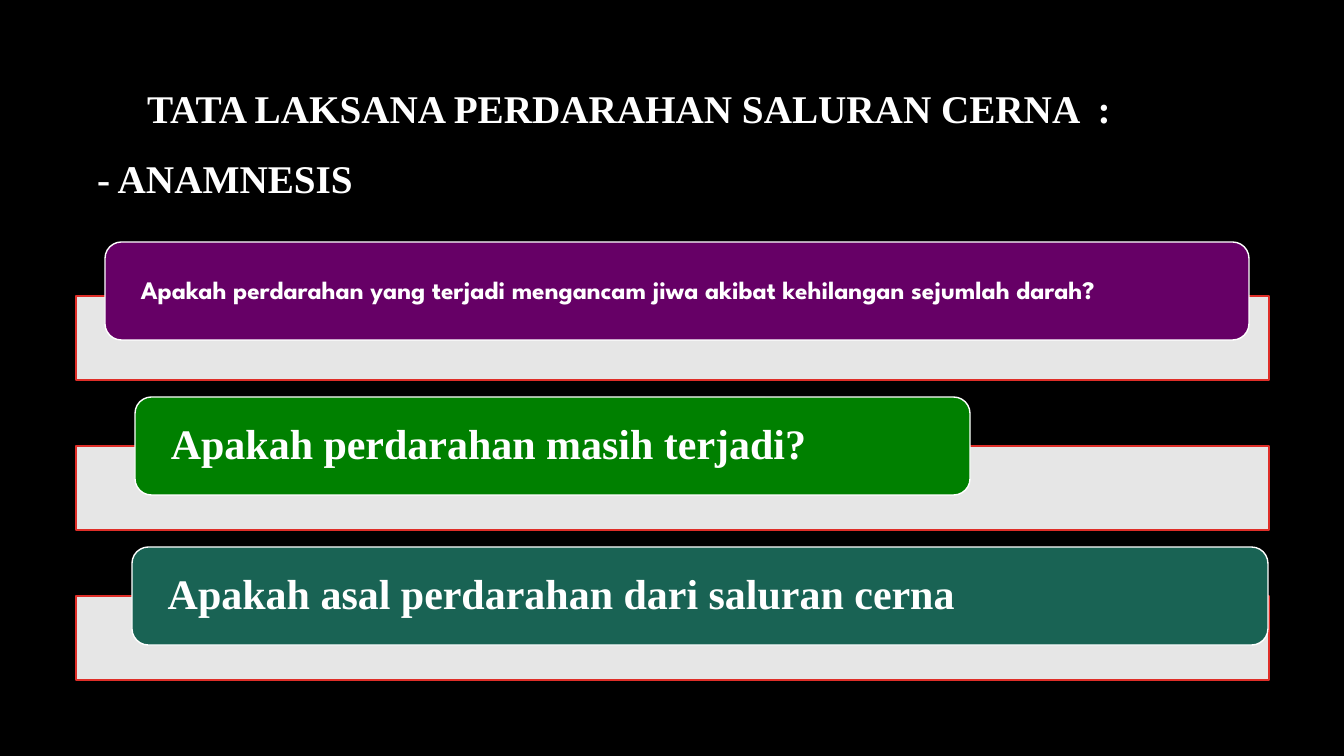
from lxml import etree
from pptx import Presentation
from pptx.dml.color import RGBColor
from pptx.enum.shapes import MSO_SHAPE
from pptx.enum.text import MSO_ANCHOR, MSO_AUTO_SIZE, PP_ALIGN
from pptx.oxml.ns import qn
from pptx.util import Emu, Pt

RECTANGLE, ROUNDED = MSO_SHAPE.RECTANGLE, MSO_SHAPE.ROUNDED_RECTANGLE
MIDDLE, LEFT, NO_AUTOFIT = MSO_ANCHOR.MIDDLE, PP_ALIGN.LEFT, MSO_AUTO_SIZE.NONE
BLACK = RGBColor(0x00, 0x00, 0x00)
WHITE = RGBColor(0xFF, 0xFF, 0xFF)
RED = RGBColor(0xDF, 0x2E, 0x28)
PURPLE = RGBColor(0x66, 0x00, 0x66)
GREEN = RGBColor(0x00, 0x80, 0x00)
TEAL = RGBColor(0x19, 0x63, 0x54)
SERIF, SANS = "Times New Roman", "League Spartan"


def px(length):
    return Emu(round(length * 12192000 / 1344))


def add_box(kind, left, top, width, height, fill, line):
    shape = slide.shapes.add_shape(kind, px(left), px(top), px(width), px(height))
    shape.shadow.inherit = False
    shape.fill.solid()
    shape.fill.fore_color.rgb = fill
    shape.line.color.rgb = line
    shape.line.width = Pt(1)
    return shape


presentation = Presentation()
presentation.slide_width, presentation.slide_height = px(1344), px(756)
slide = presentation.slides.add_slide(presentation.slide_layouts[5])
slide.background.fill.solid()
slide.background.fill.fore_color.rgb = BLACK

title = slide.shapes.title
title.left, title.top, title.width, title.height = px(87), px(85), px(1181), px(142)
frame = title.text_frame
frame.text = "TATA LAKSANA PERDARAHAN SALURAN CERNA  :\v- ANAMNESIS"
frame.word_wrap = True
frame.auto_size = NO_AUTOFIT
frame.vertical_anchor = MIDDLE
frame.margin_bottom = px(55)
paragraph = frame.paragraphs[0]
paragraph.alignment = LEFT
paragraph.line_spacing = 1.5
paragraph._p.get_or_add_pPr().set("indent", str(px(50)))
paragraph.font.name = SERIF
paragraph.font.size = Pt(28)
paragraph.font.bold = True
paragraph.font.color.rgb = WHITE

questions = [
    ("Apakah perdarahan yang terjadi mengancam jiwa akibat kehilangan sejumlah darah?",
     105, 242, 1144, PURPLE, SANS, 18),
    ("Apakah perdarahan masih terjadi?", 135, 397, 835, GREEN, SERIF, 30),
    ("Apakah asal perdarahan dari saluran cerna", 132, 547, 1136, TEAL, SERIF, 30),
]
for row, (text, left, top, width, color, font, size) in enumerate(questions):
    bar = add_box(RECTANGLE, 76, 296 + 150 * row, 1193, 84, WHITE, RED)
    bar_color = bar._element.spPr.find(qn("a:solidFill"))[0]
    etree.SubElement(bar_color, qn("a:alpha"), val="90000")

    box = add_box(ROUNDED, left, top, width, 98, color, WHITE)
    frame = box.text_frame
    frame.text = text
    frame.word_wrap = True
    frame.vertical_anchor = MIDDLE
    frame.margin_left = frame.margin_right = px(31)
    frame.margin_top = frame.margin_bottom = 0
    paragraph = frame.paragraphs[0]
    paragraph.alignment = LEFT
    paragraph.line_spacing = 0.9
    paragraph.font.name = font
    paragraph.font.size = Pt(size)
    paragraph.font.bold = True
    paragraph.font.color.rgb = WHITE

presentation.save("out.pptx")
